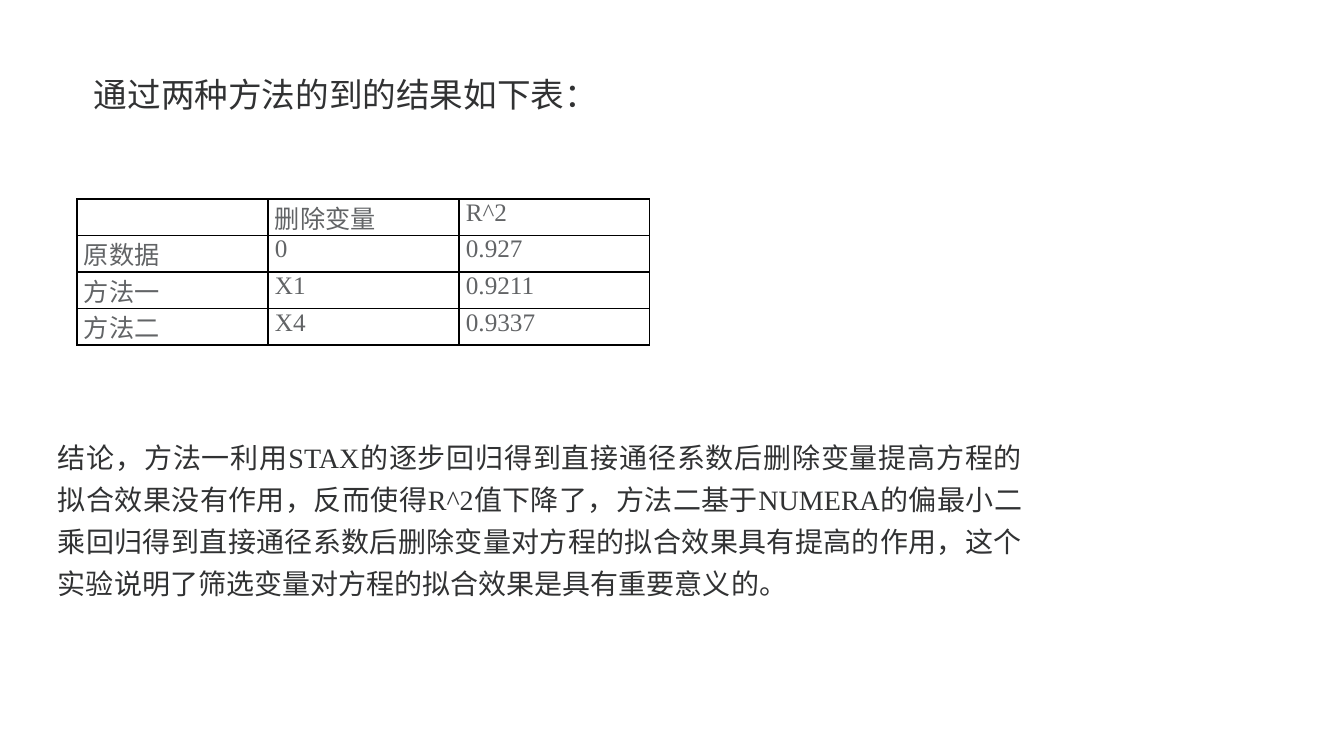
from dataclasses import dataclass

from lxml.etree import SubElement
from pptx import Presentation
from pptx.dml.color import RGBColor
from pptx.enum.lang import MSO_LANGUAGE_ID
from pptx.enum.text import MSO_AUTO_SIZE, PP_ALIGN
from pptx.oxml.ns import qn
from pptx.slide import Slide
from pptx.table import _Cell
from pptx.text.text import _Paragraph
from pptx.util import Emu, Pt


@dataclass(frozen=True)
class TextStyle:
    font: str
    size: int
    color: str


@dataclass(frozen=True)
class Theme:
    heading: TextStyle = TextStyle("Arial", 24, "313233")
    body: TextStyle = TextStyle("Times New Roman", 20, "313233")
    cell: TextStyle = TextStyle("Times New Roman", 18, "626466")
    border: str = "000000"
    border_width: int = 1
    body_leading: int = 30


@dataclass(frozen=True)
class TextBlock:
    left: int
    top: int
    width: int
    height: int
    text: str
    style: TextStyle
    wrap: bool = False
    leading: int | None = None


THEME = Theme()
EMU_PER_PX = 914400 / 100.8
TABLE_LEFT, TABLE_TOP = 77, 199
COLUMN_WIDTH, ROW_HEIGHT, CELL_INSET = 191, 35, 7

RESULTS = [
    ["", "删除变量", "R^2"],
    ["原数据", "0", "0.927"],
    ["方法一", "X1", "0.9211"],
    ["方法二", "X4", "0.9337"],
]
HEADING = TextBlock(84, 69, 529, 50, "通过两种方法的到的结果如下表：", THEME.heading)
CONCLUSION = TextBlock(
    48, 427, 984, 175,
    "结论，方法一利用STAX的逐步回归得到直接通径系数后删除变量提高方程的拟合效果没有作用，"
    "反而使得R^2值下降了，方法二基于NUMERA的偏最小二乘回归得到直接通径系数后删除变量"
    "对方程的拟合效果具有提高的作用，这个实验说明了筛选变量对方程的拟合效果是具有重要意义的。",
    THEME.body, wrap=True, leading=THEME.body_leading,
)


def px(length: int) -> Emu:
    return Emu(round(length * EMU_PER_PX))


def add_run(paragraph: _Paragraph, text: str, style: TextStyle) -> None:
    run = paragraph.add_run()
    run.text = text
    run.font.name = style.font
    run.font.size = Pt(style.size)
    run.font.color.rgb = RGBColor.from_string(style.color)
    run.font.language_id = MSO_LANGUAGE_ID.SIMPLIFIED_CHINESE


def draw_text(slide: Slide, block: TextBlock) -> None:
    box = slide.shapes.add_textbox(
        px(block.left), px(block.top), px(block.width), px(block.height))
    frame = box.text_frame
    frame.word_wrap = block.wrap
    frame.auto_size = MSO_AUTO_SIZE.SHAPE_TO_FIT_TEXT
    paragraph = frame.paragraphs[0]
    if block.wrap:
        paragraph.alignment = PP_ALIGN.JUSTIFY
    if block.leading:
        paragraph.line_spacing = Pt(block.leading)
    add_run(paragraph, block.text, block.style)


def draw_borders(cell: _Cell) -> None:
    properties = cell._tc.get_or_add_tcPr()
    for index, side in enumerate(("lnL", "lnR", "lnT", "lnB")):
        border = properties.makeelement(
            qn(f"a:{side}"), {"w": str(Pt(THEME.border_width))})
        properties.insert(index, border)
        fill = SubElement(border, qn("a:solidFill"))
        SubElement(fill, qn("a:srgbClr"), val=THEME.border)


def draw_results(slide: Slide) -> None:
    row_count, column_count = len(RESULTS), len(RESULTS[0])
    table = slide.shapes.add_table(
        row_count, column_count, px(TABLE_LEFT), px(TABLE_TOP),
        px(COLUMN_WIDTH * column_count), px(ROW_HEIGHT * row_count)).table
    table.first_row = False
    table.horz_banding = False
    for column in table.columns:
        column.width = px(COLUMN_WIDTH)
    for row, values in zip(table.rows, RESULTS):
        row.height = px(ROW_HEIGHT)
        for cell, value in zip(row.cells, values):
            cell.fill.background()
            cell.margin_left = cell.margin_right = px(CELL_INSET)
            cell.margin_top = cell.margin_bottom = 0
            draw_borders(cell)
            if value:
                paragraph = cell.text_frame.paragraphs[0]
                paragraph.alignment = PP_ALIGN.JUSTIFY
                add_run(paragraph, value, THEME.cell)


def main() -> None:
    presentation = Presentation()
    presentation.slide_width = px(1344)
    presentation.slide_height = px(756)
    slide = presentation.slides.add_slide(presentation.slide_layouts[6])
    draw_results(slide)
    for block in (HEADING, CONCLUSION):
        draw_text(slide, block)
    presentation.save("out.pptx")


if __name__ == "__main__":
    main()
